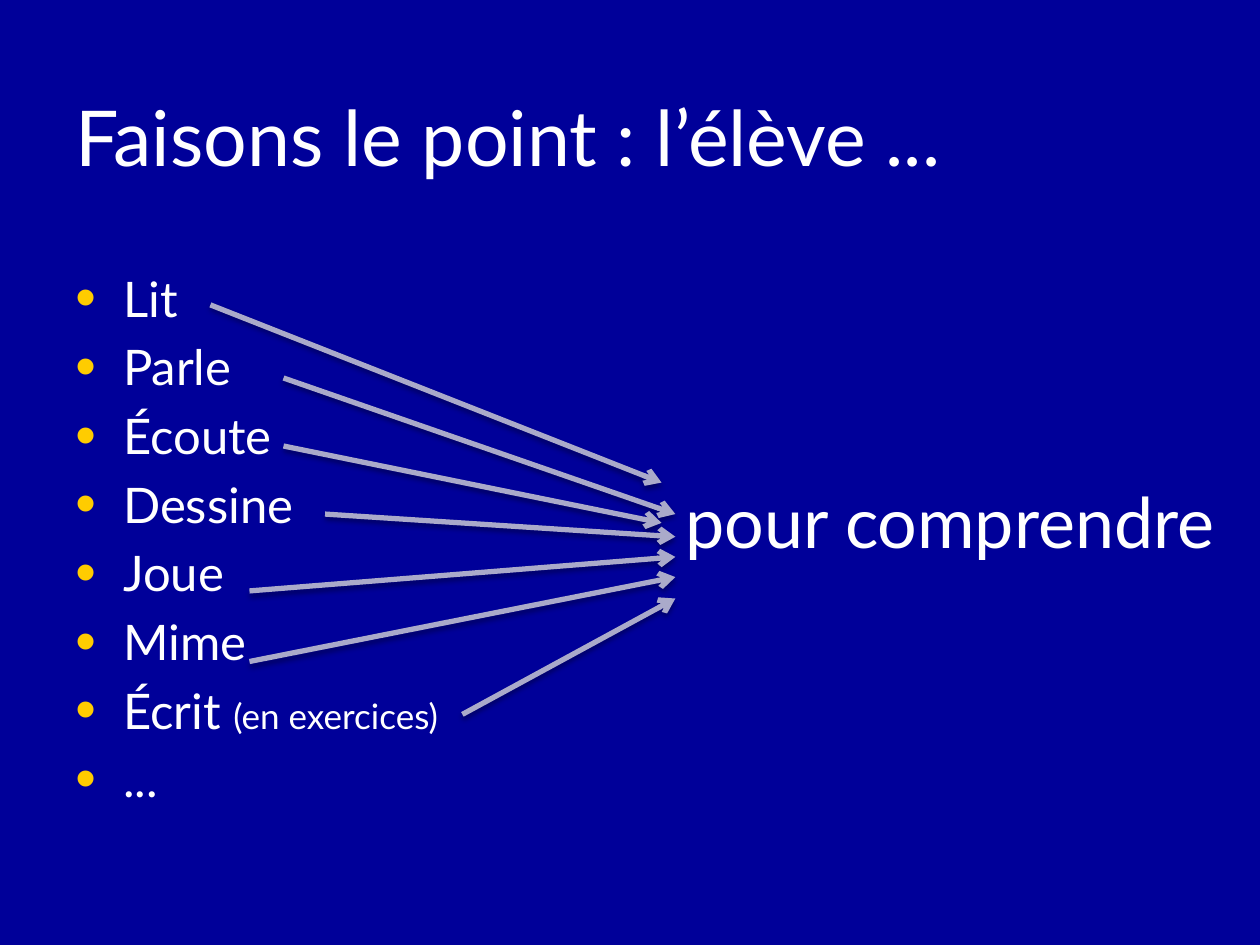
from dataclasses import dataclass

from lxml.etree import SubElement
from pptx import Presentation
from pptx.dml.color import RGBColor
from pptx.enum.shapes import MSO_CONNECTOR
from pptx.enum.text import MSO_ANCHOR, MSO_AUTO_SIZE, PP_ALIGN
from pptx.oxml.ns import qn
from pptx.util import Inches, Pt


@dataclass(frozen=True)
class Theme:
    font: str = "Lato"
    background: str = "000099"
    text: str = "FFFFFF"
    bullet: str = "FFCC00"
    arrow: str = "AAAACA"
    shadow: str = "000000"
    title_size: float = 44
    goal_size: float = 40
    item_size: float = 28
    note_size: float = 20


@dataclass(frozen=True)
class Activity:
    label: str
    note: str = ""


@dataclass(frozen=True)
class Arrow:
    start: tuple[float, float]
    end: tuple[float, float]


THEME = Theme()

ACTIVITIES = [
    Activity("Lit"),
    Activity("Parle"),
    Activity("Écoute"),
    Activity("Dessine"),
    Activity("Joue"),
    Activity("Mime"),
    Activity("Écrit ", "(en exercices)"),
    Activity("..."),
]

ARROWS = [
    Arrow((2.25, 3), (5.36, 4.08)),
    Arrow((1.67, 2.42), (5.25, 3.83)),
    Arrow((2.25, 3.54), (5.25, 4.15)),
    Arrow((2.58, 4.08), (5.36, 4.26)),
    Arrow((1.98, 4.69), (5.36, 4.42)),
    Arrow((1.98, 5.25), (5.36, 4.58)),
    Arrow((3.67, 5.67), (5.36, 4.75)),
]


def format_run(r, size: float) -> None:
    r.font.name = THEME.font
    r.font.size = Pt(size)
    r.font.color.rgb = RGBColor.from_string(THEME.text)


def add_box(slide, left: float, top: float, width: float, height: float):
    sp = slide.shapes.add_textbox(
        Inches(left), Inches(top), Inches(width), Inches(height))
    sp.text_frame.word_wrap = True
    return sp.text_frame


def set_bullet(p) -> None:
    pPr = p._p.get_or_add_pPr()
    pPr.set("marL", str(Inches(0.38)))
    pPr.set("indent", str(-Inches(0.38)))
    color = SubElement(pPr, qn("a:buClr"))
    SubElement(color, qn("a:srgbClr"), val=THEME.bullet)
    SubElement(pPr, qn("a:buSzPct"), val="120000")
    SubElement(pPr, qn("a:buFont"), typeface="Arial")
    SubElement(pPr, qn("a:buChar"), char="•")


def add_activities(tf, activities: list[Activity]) -> None:
    for i, activity in enumerate(activities):
        p = tf.add_paragraph() if i else tf.paragraphs[0]
        set_bullet(p)
        if i:
            p.space_before = Pt(0.2 * THEME.item_size)
        p.text = activity.label
        format_run(p.runs[0], THEME.item_size)
        if activity.note:
            r = p.add_run()
            r.text = activity.note
            format_run(r, THEME.note_size)


def add_arrow(slide, arrow: Arrow) -> None:
    ends = [Inches(v) for v in (*arrow.start, *arrow.end)]
    line = slide.shapes.add_connector(MSO_CONNECTOR.STRAIGHT, *ends)
    line.line.color.rgb = RGBColor.from_string(THEME.arrow)
    line.line.width = Pt(3)
    SubElement(line.line._get_or_add_ln(), qn("a:tailEnd"), type="arrow")
    # Soft shadow straight below the line
    effects = SubElement(line._element.spPr, qn("a:effectLst"))
    shadow = SubElement(
        effects, qn("a:outerShdw"), blurRad=str(Pt(3.1)), dist=str(Pt(1.8)),
        dir="5400000", rotWithShape="0")
    color = SubElement(shadow, qn("a:srgbClr"), val=THEME.shadow)
    SubElement(color, qn("a:alpha"), val="35000")


def main() -> None:
    prs = Presentation()
    prs.slide_width, prs.slide_height = Inches(10), Inches(7.5)
    slide = prs.slides.add_slide(prs.slide_layouts[5])
    slide.background.fill.solid()
    slide.background.fill.fore_color.rgb = RGBColor.from_string(THEME.background)

    # Title
    title = slide.shapes.title
    title.left, title.top = Inches(0.5), Inches(0.32)
    title.width, title.height = Inches(9), Inches(1.51)
    tf = title.text_frame
    tf.text = "Faisons le point : l’élève ..."
    tf.auto_size = MSO_AUTO_SIZE.NONE
    tf.vertical_anchor = MSO_ANCHOR.MIDDLE
    tf.paragraphs[0].alignment = PP_ALIGN.LEFT
    format_run(tf.paragraphs[0].runs[0], THEME.title_size)

    # What the pupil does
    add_activities(add_box(slide, 0.5, 2.08, 4.42, 4.5), ACTIVITIES)

    # Shared goal, set level with the arrowheads by its insets
    tf = add_box(slide, 5.08, 2.08, 4.92, 4.5)
    tf.margin_left, tf.margin_top = Inches(0.36), Inches(1.72)
    tf.text = "pour comprendre"
    format_run(tf.paragraphs[0].runs[0], THEME.goal_size)

    # Arrows from each activity to the goal
    for arrow in ARROWS:
        add_arrow(slide, arrow)

    prs.save("out.pptx")


if __name__ == "__main__":
    main()
